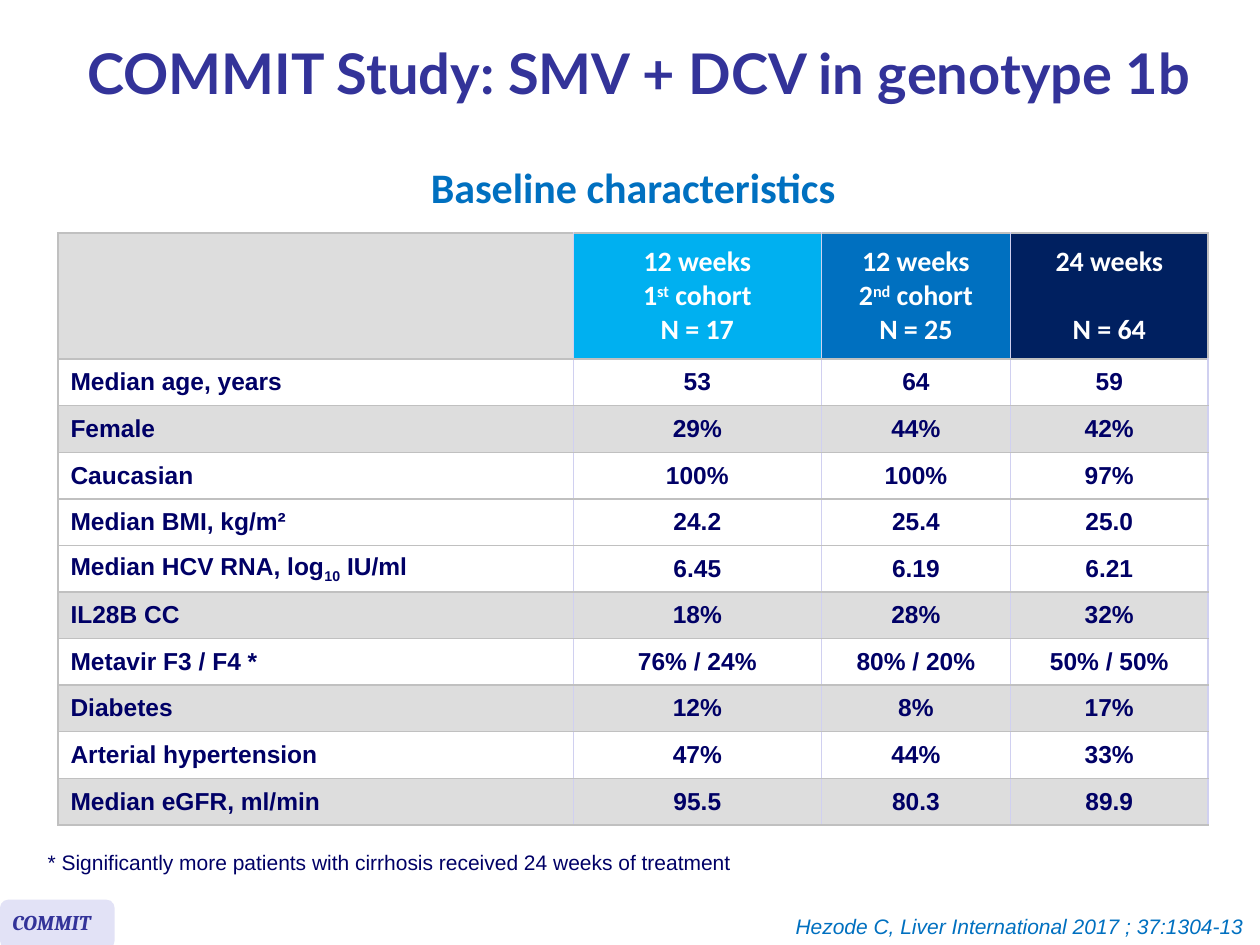
import pptx
import pptx.dml.color
import pptx.enum.shapes
import pptx.enum.text
import pptx.oxml
import pptx.oxml.ns
import pptx.util

ALIGN = pptx.enum.text.PP_ALIGN
ANCHOR = pptx.enum.text.MSO_ANCHOR
SLIDE_WIDTH = pptx.util.Inches(10)
SLIDE_HEIGHT = pptx.util.Inches(7.5)
NAVY, INDIGO, BLUE, WHITE = "000066", "333399", "0070C0", "FFFFFF"
GREY, RULE, LILAC = "DDDDDD", "C0C0C0", "D0D0F0"
COLUMN_SHARES = [40.9, 19.7, 15, 15.7]
HEADER_SHARE, ROW_SHARE = 13.33, 4.93
HEADER_FORMAT = {"name": "Calibri", "size": 16, "bold": True, "color": WHITE}
BODY_FORMAT = {"name": "Arial", "size": 14, "bold": True, "color": NAVY}

COHORTS = [
    ("00B0F0", [["12 weeks"], ["1", ("st", 30), " cohort"], ["N = 17"]]),
    (BLUE, [["12 weeks"], ["2", ("nd", 30), " cohort"], ["N = 25"]]),
    ("002060", [["24 weeks"], ["N = 64"]]),
]
CHARACTERISTICS = [
    (["Median age, years"], WHITE, ["53", "64", "59"]),
    (["Female"], GREY, ["29%", "44%", "42%"]),
    (["Caucasian"], WHITE, ["100%", "100%", "97%"]),
    (["Median BMI, kg/m²"], WHITE, ["24.2", "25.4", "25.0"]),
    (["Median HCV RNA, log", ("10", -25), " IU/ml"], WHITE, ["6.45", "6.19", "6.21"]),
    (["IL28B CC"], GREY, ["18%", "28%", "32%"]),
    (["Metavir F3 / F4 *"], WHITE, ["76% / 24%", "80% / 20%", "50% / 50%"]),
    (["Diabetes"], GREY, ["12%", "8%", "17%"]),
    (["Arterial hypertension"], WHITE, ["47%", "44%", "33%"]),
    (["Median eGFR, ml/min"], GREY, ["95.5", "80.3", "89.9"]),
]


def color(hex_code):
    return pptx.dml.color.RGBColor.from_string(hex_code)


def across(percent):
    return round(SLIDE_WIDTH * percent / 100)


def down(percent):
    return round(SLIDE_HEIGHT * percent / 100)


def area(left, top, width, height):
    return across(left), down(top), across(width), down(height)


def apply_format(font, text_format):
    for attribute, value in text_format.items():
        if attribute == "color":
            font.color.rgb = color(value)
        else:
            setattr(font, attribute, pptx.util.Pt(value) if attribute == "size" else value)


def write_lines(frame, lines, text_format, align):
    for index, pieces in enumerate(lines):
        line = frame.paragraphs[0] if index == 0 else frame.add_paragraph()
        line.alignment = align
        for piece in pieces:
            words, baseline = piece if isinstance(piece, tuple) else (piece, 0)
            run = line.add_run()
            run.text = words
            apply_format(run.font, text_format)
            if baseline:
                run._r.get_or_add_rPr().set("baseline", str(baseline * 1000))


def add_text(shapes, place, words, text_format, align=ALIGN.LEFT, wrap=True):
    frame = shapes.add_textbox(*area(*place)).text_frame
    frame.word_wrap = wrap
    frame.auto_size = pptx.enum.text.MSO_AUTO_SIZE.SHAPE_TO_FIT_TEXT
    write_lines(frame, [[words]], text_format, align)
    return frame


def add_title(shapes):
    title_format = {"name": "Lato", "size": 32, "bold": True, "color": INDIGO}
    frame = add_text(shapes, (5.1, 1.07, 91.3, 14.27),
                     "COMMIT Study: SMV + DCV in genotype 1b", title_format, ALIGN.CENTER)
    frame.auto_size = pptx.enum.text.MSO_AUTO_SIZE.NONE
    frame.vertical_anchor = ANCHOR.MIDDLE
    frame.paragraphs[0].line_spacing = 0.85


def add_study_tag(shapes):
    tag = shapes.add_group_shape().shapes
    plate = tag.add_shape(pptx.enum.shapes.MSO_SHAPE.ROUNDED_RECTANGLE,
                          *area(0, 95.2, 9.1, 5.2))
    plate.shadow.inherit = False
    plate.fill.solid()
    plate.fill.fore_color.rgb = color("E2E2F6")
    plate.line.fill.background()
    tag_format = {"name": "Cambria", "size": 12, "bold": True, "italic": True, "color": INDIGO}
    add_text(tag, (0, 95.6, 9.8, 4), "COMMIT", tag_format)


def style_cell(cell, fill, left, right):
    sides = {"lnL": left, "lnR": right, "lnT": RULE, "lnB": RULE}
    for side, hex_code in sides.items():
        cell._tc.get_or_add_tcPr().append(pptx.oxml.parse_xml(
            f'<a:{side} {pptx.oxml.ns.nsdecls("a")} w="12700"><a:solidFill>'
            f'<a:srgbClr val="{hex_code}"/></a:solidFill></a:{side}>'))
    cell.fill.solid()
    cell.fill.fore_color.rgb = color(fill)
    cell.vertical_anchor = ANCHOR.MIDDLE


def add_baseline_table(shapes):
    row_shares = [HEADER_SHARE] + [ROW_SHARE] * len(CHARACTERISTICS)
    place = area(4.6, 24.67, sum(COLUMN_SHARES), sum(row_shares))
    table = shapes.add_table(len(row_shares), len(COLUMN_SHARES), *place).table
    table.first_row = table.horz_banding = False
    for column, share in zip(table.columns, COLUMN_SHARES):
        column.width = across(share)
    for row, share in zip(table.rows, row_shares):
        row.height = down(share)

    style_cell(table.cell(0, 0), GREY, RULE, LILAC)
    for column, (fill, lines) in enumerate(COHORTS, 1):
        cell = table.cell(0, column)
        style_cell(cell, fill, LILAC, RULE if column == len(COHORTS) else LILAC)
        write_lines(cell.text_frame, lines, HEADER_FORMAT, ALIGN.CENTER)
    table.cell(0, len(COHORTS)).text_frame.paragraphs[-1].space_before = pptx.util.Pt(19.5)

    for row, (label, fill, values) in enumerate(CHARACTERISTICS, 1):
        for column, pieces in enumerate([label] + [[value] for value in values]):
            cell = table.cell(row, column)
            style_cell(cell, fill, LILAC if column else RULE, LILAC)
            write_lines(cell.text_frame, [pieces], BODY_FORMAT,
                        ALIGN.CENTER if column else ALIGN.LEFT)


def main():
    deck = pptx.Presentation()
    deck.slide_width, deck.slide_height = SLIDE_WIDTH, SLIDE_HEIGHT
    shapes = deck.slides.add_slide(deck.slide_layouts[6]).shapes
    add_text(shapes, (0.8, 16.4, 98.9, 6.67), "Baseline characteristics",
             {"name": "Calibri", "size": 24, "bold": True, "color": BLUE}, ALIGN.CENTER)
    add_text(shapes, (2.8, 89.2, 56.7, 4),
             "* Significantly more patients with cirrhosis received 24 weeks of treatment",
             {"name": "Arial", "size": 12, "color": NAVY}, wrap=False)
    add_title(shapes)
    add_study_tag(shapes)
    add_text(shapes, (61.9, 96, 37.8, 4), "Hezode C, Liver International 2017 ; 37:1304-13",
             {"name": "Arial", "size": 12, "italic": True, "color": BLUE}, ALIGN.RIGHT, False)
    add_baseline_table(shapes)
    deck.save("out.pptx")


if __name__ == "__main__":
    main()
